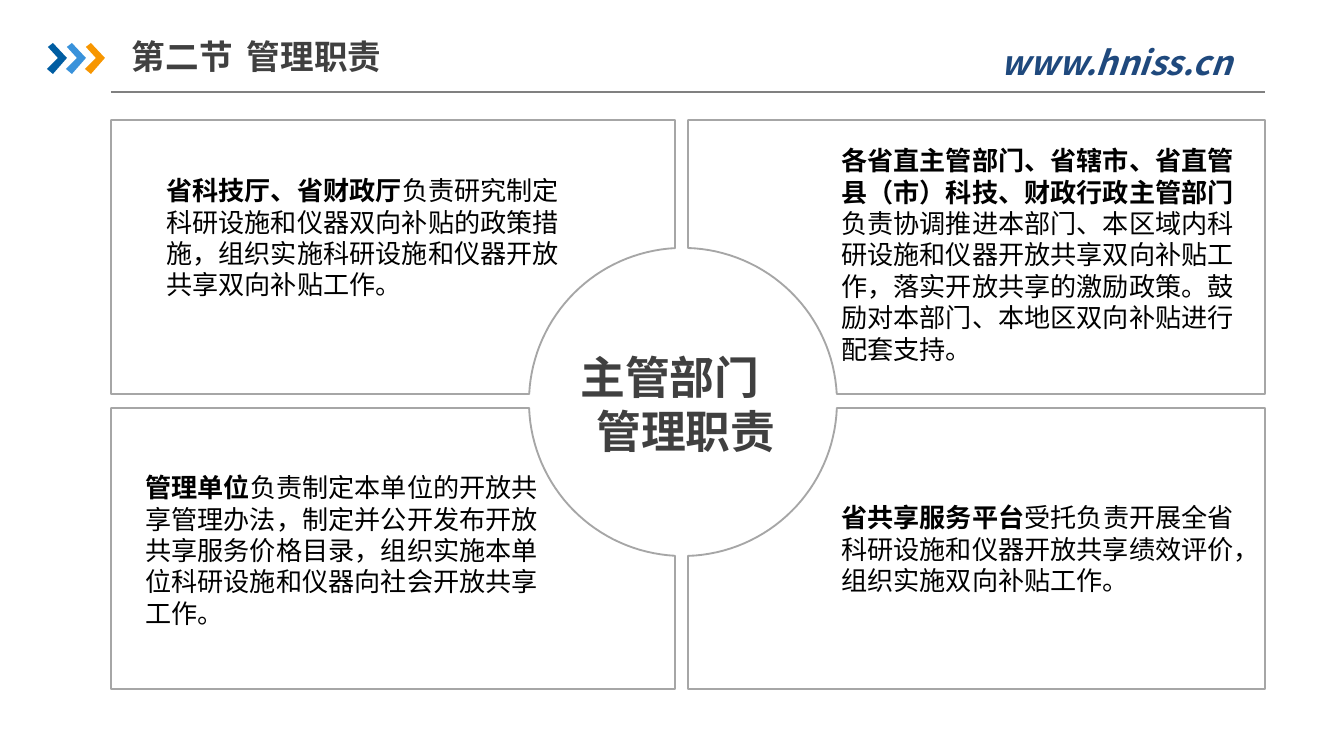
"""Build the slide on management duties: four panels around a circular centre."""
import math
from dataclasses import dataclass

import pptx
import pptx.dml.color
import pptx.enum.shapes
import pptx.enum.text
import pptx.oxml.ns
import pptx.util
from lxml import etree

SCALE = 914400 / 134.4
CJK_FONT = "Noto Sans CJK SC"
COLOURS = {
    "rule": "808080",
    "outline": "A6A6A6",
    "panel": "FFFFFF",
    "heading": "404040",
    "body": "000000",
    "address": "1F497D",
    "chevron_1": "005DA2",
    "chevron_2": "3992DB",
    "chevron_3": "F79600",
}
CHEVRON = [(1, 4), (6, 0), (20, 15), (6, 31), (0, 26), (11, 15)]
CENTRE_X, CENTRE_Y, RADIUS = 683, 402, 154
ARC_STEPS = 32


@dataclass(frozen=True)
class Panel:
    outer_x: int
    outer_y: int
    inner_x: int
    inner_y: int


@dataclass(frozen=True)
class Frame:
    left: int
    top: int
    width: int
    height: int


@dataclass(frozen=True)
class Style:
    size: int
    colour: str
    font: str = CJK_FONT
    bold: bool = True
    italic: bool = False


@dataclass(frozen=True)
class Duty:
    frame: Frame
    owner: str
    task: str


HEADING = Style(18, "heading")
ADDRESS = Style(18, "address", italic=True)
CENTRE = Style(24, "heading")
OWNER = Style(14, "body", "Arial")
TASK = Style(14, "body", "Arial", bold=False)

PANELS = [
    Panel(outer_x, outer_y, inner_x, inner_y)
    for outer_x, inner_x in ((111, 675), (1265, 688))
    for outer_y, inner_y in ((120, 394), (689, 408))
]
DUTIES = [
    Duty(Frame(153, 168, 423, 140), "省科技厅、省财政厅",
         "负责研究制定科研设施和仪器双向补贴的政策措施，组织实施科研设施和仪器开放共享双向补贴工作。"),
    Duty(Frame(828, 138, 423, 235), "各省直主管部门、省辖市、省直管县（市）科技、财政行政主管部门",
         "负责协调推进本部门、本区域内科研设施和仪器开放共享双向补贴工作，落实开放共享的激励政策。"
         "鼓励对本部门、本地区双向补贴进行配套支持。"),
    Duty(Frame(132, 465, 423, 172), "管理单位",
         "负责制定本单位的开放共享管理办法，制定并公开发布开放共享服务价格目录，"
         "组织实施本单位科研设施和仪器向社会开放共享工作。"),
    Duty(Frame(828, 495, 423, 109), "省共享服务平台",
         "受托负责开展全省科研设施和仪器开放共享绩效评价，组织实施双向补贴工作。"),
]


def px(length: float) -> int:
    """Turn pixels into EMU."""
    return round(length * SCALE)


def colour(name: str) -> pptx.dml.color.RGBColor:
    """Look up a named colour."""
    return pptx.dml.color.RGBColor.from_string(COLOURS[name])


def add_outline(page, points: list, fill: str, line: str | None = None) -> None:
    """Draw a closed polygon through points given in pixels."""
    corners = [(px(x), px(y)) for x, y in points]
    builder = page.shapes.build_freeform(*corners[0], scale=1.0)
    builder.add_line_segments(corners[1:], close=True)
    shape = builder.convert_to_shape()
    shape.shadow.inherit = False
    shape.fill.solid()
    shape.fill.fore_color.rgb = colour(fill)
    if line is None:
        shape.line.fill.background()
    else:
        shape.line.color.rgb = colour(line)
        shape.line.width = pptx.util.Pt(1)


def add_panel(page, panel: Panel) -> None:
    """Draw a rectangle whose inner corner is cut by the central circle."""
    across, down = panel.inner_x - CENTRE_X, panel.inner_y - CENTRE_Y
    rise = math.copysign(math.sqrt(RADIUS**2 - across**2), down)
    reach = math.copysign(math.sqrt(RADIUS**2 - down**2), across)
    first, last = math.atan2(down, reach), math.atan2(rise, across)
    angles = [first + (last - first) * step / ARC_STEPS for step in range(ARC_STEPS + 1)]
    arc = [(CENTRE_X + RADIUS * math.cos(a), CENTRE_Y + RADIUS * math.sin(a)) for a in angles]
    corners = [(panel.inner_x, panel.outer_y), (panel.outer_x, panel.outer_y),
               (panel.outer_x, panel.inner_y)]
    add_outline(page, corners + arc, "panel", "outline")


def add_rule(page, left: int, right: int, y: int) -> None:
    """Draw the line under the heading."""
    rule = page.shapes.add_connector(
        pptx.enum.shapes.MSO_CONNECTOR.STRAIGHT, px(left), px(y), px(right), px(y))
    rule.line.color.rgb = colour("rule")
    rule.line.width = pptx.util.Pt(0.75)
    etree.SubElement(rule._element.spPr, pptx.oxml.ns.qn("a:effectLst"))


def add_box(page, frame: Frame):
    """Add a wrapping text box and return its text frame."""
    box = page.shapes.add_textbox(
        px(frame.left), px(frame.top), px(frame.width), px(frame.height))
    box.text_frame.word_wrap = True
    box.text_frame.auto_size = pptx.enum.text.MSO_AUTO_SIZE.SHAPE_TO_FIT_TEXT
    return box.text_frame


def add_span(para, text: str, style: Style) -> None:
    """Append one styled run."""
    span = para.add_run()
    span.text = text
    span.font.name = style.font
    span.font.size = pptx.util.Pt(style.size)
    span.font.bold = style.bold
    span.font.italic = style.italic
    span.font.color.rgb = colour(style.colour)
    east_asian = etree.SubElement(span.font._element, pptx.oxml.ns.qn("a:ea"))
    east_asian.set("typeface", CJK_FONT)


def add_header(page) -> None:
    """Draw the rule, chevrons, web address and section heading."""
    add_rule(page, 111, 1265, 92)
    for index in range(3):
        points = [(47 + 19 * index + x, 43 + y) for x, y in CHEVRON]
        add_outline(page, points, f"chevron_{index + 1}")
    para = add_box(page, Frame(958, 35, 317, 54)).paragraphs[0]
    para.alignment = pptx.enum.text.PP_ALIGN.CENTER
    add_span(para, "www.hniss.cn", ADDRESS)
    heading = add_box(page, Frame(132, 28, 465, 57))
    heading.auto_size = pptx.enum.text.MSO_AUTO_SIZE.NONE
    heading.vertical_anchor = pptx.enum.text.MSO_ANCHOR.MIDDLE
    heading.margin_left = heading.margin_right = 0
    para = heading.paragraphs[0]
    tabs = etree.SubElement(para._p.get_or_add_pPr(), pptx.oxml.ns.qn("a:tabLst"))
    etree.SubElement(tabs, pptx.oxml.ns.qn("a:tab"), pos=str(px(115)), algn="l")
    add_span(para, "第二节\t管理职责", HEADING)


def add_centre(page) -> None:
    """Write the two stepped lines inside the circle."""
    box = add_box(page, Frame(554, 343, 261, 122))
    for index, (text, indent) in enumerate((("主管部门", 13), ("管理职责", 29))):
        para = box.add_paragraph() if index else box.paragraphs[0]
        para._p.get_or_add_pPr().set("marL", str(px(indent)))
        add_span(para, text, CENTRE)


def main() -> None:
    """Assemble and save the deck."""
    deck = pptx.Presentation()
    deck.slide_width, deck.slide_height = px(1344), px(756)
    page = deck.slides.add_slide(deck.slide_layouts[6])
    add_header(page)
    for panel in PANELS:
        add_panel(page, panel)
    for duty in DUTIES:
        para = add_box(page, duty.frame).paragraphs[0]
        add_span(para, duty.owner, OWNER)
        add_span(para, duty.task, TASK)
    add_centre(page)
    deck.save("out.pptx")


if __name__ == "__main__":
    main()
